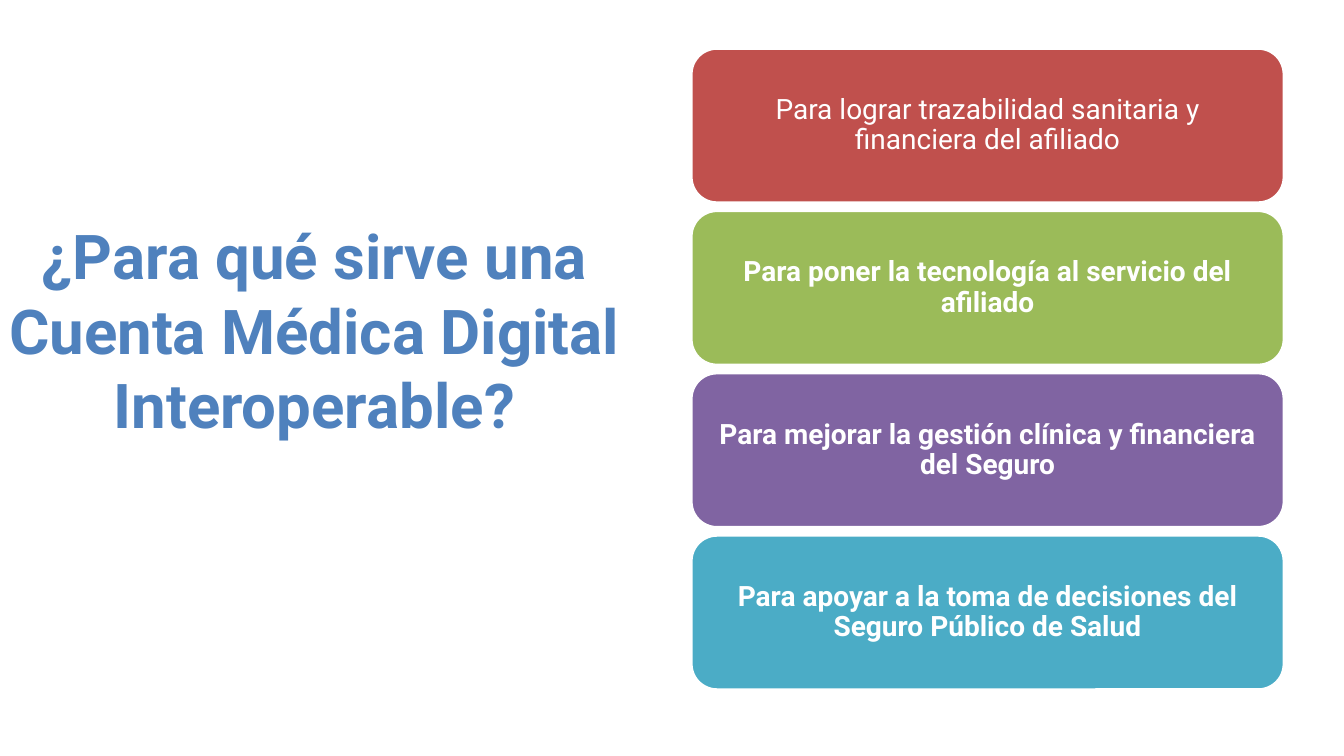
from pptx import Presentation
from pptx.dml.color import RGBColor
from pptx.enum.shapes import MSO_SHAPE
from pptx.enum.text import MSO_ANCHOR, MSO_AUTO_SIZE, PP_ALIGN
from pptx.util import Cm, Pt

FONT = "Roboto"
WHITE = RGBColor(0xFF, 0xFF, 0xFF)
BLUE = RGBColor(0x4F, 0x81, 0xBD)
RED = RGBColor(0xC0, 0x50, 0x4D)
GREEN = RGBColor(0x9B, 0xBB, 0x59)
PURPLE = RGBColor(0x80, 0x64, 0xA2)
TEAL = RGBColor(0x4B, 0xAC, 0xC6)

TITLE = "¿Para qué sirve una Cuenta Médica Digital Interoperable?"
# Text, fill, bold
CARDS = [
    ("Para lograr trazabilidad sanitaria y financiera del afiliado", RED, False),
    ("Para poner la tecnología al servicio del afiliado", GREEN, True),
    ("Para mejorar la gestión clínica y financiera del Seguro", PURPLE, True),
    ("Para apoyar a la toma de decisiones del Seguro Público de Salud", TEAL, True),
]


def write(frame, text, size, color, bold, pad_x, pad_y):
    """Write one centred run in the middle of a text frame."""
    frame.word_wrap = True
    frame.auto_size = MSO_AUTO_SIZE.NONE
    frame.vertical_anchor = MSO_ANCHOR.MIDDLE
    frame.margin_left = frame.margin_right = Cm(pad_x)
    frame.margin_top = frame.margin_bottom = Cm(pad_y)
    para = frame.paragraphs[0]
    para.alignment = PP_ALIGN.CENTER
    run = para.add_run()
    run.text = text
    font = run.font
    font.name, font.size, font.bold = FONT, Pt(size), bold
    font.color.rgb = color
    return para


def add_title(slide, left, top, width, height):
    title = slide.shapes.title
    title.left, title.top = Cm(left), Cm(top)
    title.width, title.height = Cm(width), Cm(height)
    write(title.text_frame, TITLE, 44.1, BLUE, True, 0.28, 0.15)


def add_cards(slide, left, top, width, height, gap=0.2):
    """Stack the cards evenly in the given box."""
    count = len(CARDS)
    tall = (height - gap * (count - 1)) / count
    for i, (text, fill, bold) in enumerate(CARDS):
        card = slide.shapes.add_shape(
            MSO_SHAPE.ROUNDED_RECTANGLE,
            Cm(left), Cm(top + i * (tall + gap)), Cm(width), Cm(tall))
        card.shadow.inherit = False
        card.fill.solid()
        card.fill.fore_color.rgb = fill
        card.line.color.rgb = WHITE
        card.line.width = Pt(2)
        para = write(card.text_frame, text, 20, WHITE, bold, 0.4, 0.3)
        para.line_spacing = 0.9


def main():
    deck = Presentation()
    deck.slide_width, deck.slide_height = Cm(33.87), Cm(19.05)
    slide = deck.slides.add_slide(deck.slide_layouts[5])
    # Reasons on the right
    add_cards(slide, 17.42, 1.22, 14.94, 16.16)
    # Question on the left
    add_title(slide, -0.81, 6.71, 17.48, 3.18)
    deck.save("out.pptx")


if __name__ == "__main__":
    main()
